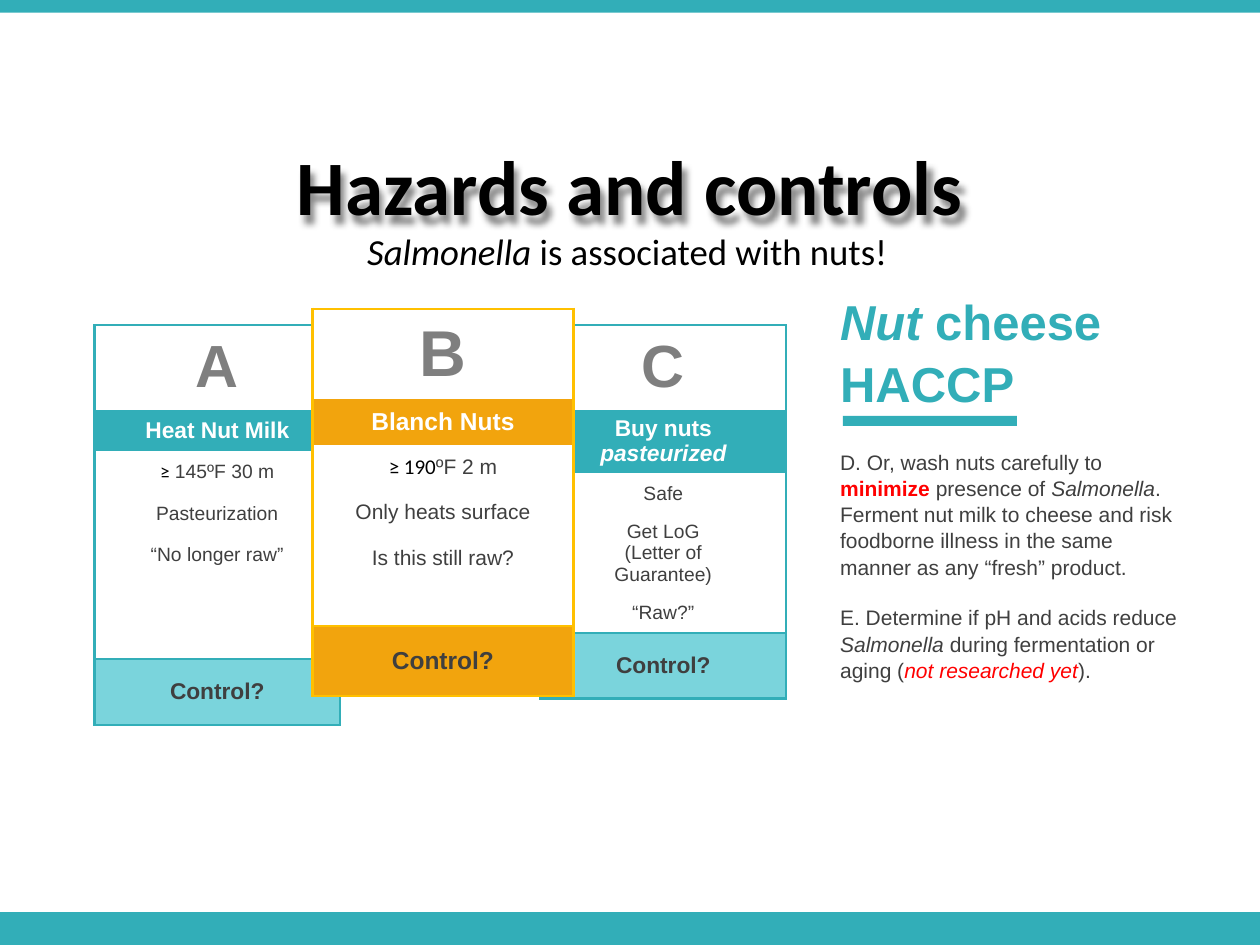
from lxml import etree
from pptx import Presentation
from pptx.dml.color import RGBColor
from pptx.enum.shapes import MSO_SHAPE
from pptx.enum.text import MSO_ANCHOR, PP_ALIGN
from pptx.oxml.ns import qn
from pptx.util import Pt

RECT = MSO_SHAPE.RECTANGLE
MIDDLE, TOP = MSO_ANCHOR.MIDDLE, MSO_ANCHOR.TOP
CENTER, LEFT = PP_ALIGN.CENTER, PP_ALIGN.LEFT

HUES = {"teal": "32AEB8", "aqua": "7AD4DC", "gold": "FFC000", "amber": "F2A40D",
        "gray": "7F7F7F", "dark": "3F3F3F", "black": "000000",
        "white": "FFFFFF", "red": "FF0000"}

# Content: a paragraph is a list of runs, (text, flags); flags: b bold, i italic,
# r red, c Calibri in black
TITLE = [[("Hazards and controls", "b")]]
SUB = [[("Salmonella", "i"), (" is associated with nuts!", "")]]
HEAD = [[("Nut", "bi"), (" cheese HACCP", "b")]]
BODY = [
    [("D. Or, wash nuts carefully to ", ""), ("minimize", "br"),
     (" presence of ", ""), ("Salmonella", "i"),
     (". Ferment nut milk to cheese and risk foodborne illness in the same "
      "manner as any “fresh” product.", "")],
    [("E. Determine if pH and acids reduce ", ""), ("Salmonella", "i"),
     (" during fermentation or aging (", ""), ("not researched yet", "ir"),
     (").", "")],
]

# Row heights: letter, name and items, control; columns: side, middle
SMALL = {"rows": (48.2, 23.8, 37.4), "cols": (15.8, 105.8), "sizes": (34, 13, 11),
         "line": "teal", "band": "teal", "foot": "aqua"}
LARGE = {"rows": (51.8, 25.9, 40.3), "cols": (17.3, 114.5), "sizes": (37, 14, 12),
         "line": "gold", "band": "amber", "foot": "amber"}

CARDS = [
    {"at": (54, 185.8), "look": SMALL, "letter": "A",
     "name": [[("Heat Nut Milk", "b")]],
     "items": [[[("≥", "c"), (" 145ºF 30 m", "")]],
               [[("Pasteurization", "")]],
               [[("“No longer raw”", "")]], [], []]},
    {"at": (308.9, 185.8), "look": SMALL, "letter": "C",
     "name": [[("Buy nuts", "b")], [("pasteurized", "bi")]],
     "items": [[[("Safe", "")]],
               [[("Get LoG", "")], [("(Letter of Guarantee)", "")]],
               [[("“Raw?”", "")]]]},
    {"at": (178.6, 176.4), "look": LARGE, "letter": "B",
     "name": [[("Blanch Nuts", "b")]],
     "items": [[[("≥ 190", "c"), ("ºF 2 m", "")]],
               [[("Only heats surface", "")]],
               [[("Is this still raw?", "")]], []]},
]


def rgb(hue):
    return RGBColor.from_string(HUES[hue])


def write(frame, paras, size, hue, face="Arial", align=LEFT):
    for n, runs in enumerate(paras):
        para = frame.paragraphs[0] if n == 0 else frame.add_paragraph()
        para.alignment = align
        for text, flags in runs:
            run = para.add_run()
            run.text = text
            font = run.font
            font.size = Pt(size)
            font.bold, font.italic = "b" in flags, "i" in flags
            font.name = "Calibri" if "c" in flags else face
            tone = "black" if "c" in flags else "red" if "r" in flags else hue
            font.color.rgb = rgb(tone)


def add_bar(x, y, wide, high):
    bar = slide.shapes.add_shape(RECT, Pt(x), Pt(y), Pt(wide), Pt(high))
    bar.shadow.inherit = False
    bar.fill.solid()
    bar.fill.fore_color.rgb = rgb("teal")
    bar.line.fill.background()


def add_text(at, paras, size, hue, face="Arial", align=LEFT, anchor=TOP, space=1.04):
    box = slide.shapes.add_textbox(*[Pt(v) for v in at])
    frame = box.text_frame
    frame.word_wrap = True
    frame.vertical_anchor = anchor
    write(frame, paras, size, hue, face, align)
    for para in frame.paragraphs:
        para.line_spacing = space
    return box


def add_edges(cell, sides, hue):
    props = cell._tc.get_or_add_tcPr()
    for side in "LRTB":
        edge = etree.SubElement(props, qn("a:ln" + side), w=str(Pt(1.5)))
        if side in sides:
            fill = etree.SubElement(edge, qn("a:solidFill"))
            etree.SubElement(fill, qn("a:srgbClr"), val=HUES[hue])
        else:
            etree.SubElement(edge, qn("a:noFill"))


def add_card(card):
    look = card["look"]
    big, mid, small = look["sizes"]
    # Each row: paragraphs, text size, text colour, fill
    rows = [([[(card["letter"], "b")]], big, "gray", "white"),
            (card["name"], mid, "white", look["band"])]
    rows += [(item, small, "dark", "white") for item in card["items"]]
    rows.append(([[("Control?", "b")]], mid, "dark", look["foot"]))
    last = len(rows) - 1

    first, step, foot = look["rows"]
    highs = [first] + [step] * (last - 1) + [foot]
    side, middle = look["cols"]
    wides = [side, middle, side]
    x, y = card["at"]
    table = slide.shapes.add_table(len(rows), 3, Pt(x), Pt(y), Pt(sum(wides)),
                                   Pt(sum(highs))).table
    table.first_row = table.horz_banding = False
    for col, wide in zip(table.columns, wides):
        col.width = Pt(wide)
    for row, high in zip(table.rows, highs):
        row.height = Pt(high)
    table.cell(last, 0).merge(table.cell(last, 2))

    for r, (paras, size, hue, fill) in enumerate(rows):
        for c in range(3):
            cell = table.cell(r, c)
            sides = "L" * (c == 0) + "R" * (c == 2)
            sides += "T" * (r == 0) + "B" * (r == last - 1)
            add_edges(cell, "LRTB" if r == last else sides, look["line"])
            cell.fill.solid()
            cell.fill.fore_color.rgb = rgb(fill)
            cell.vertical_anchor = MIDDLE
            if paras and c == (0 if r == last else 1):
                write(cell.text_frame, paras, size, hue, align=CENTER)
            else:  # keeps an empty cell from stretching its row
                end = cell.text_frame.paragraphs[0]._p.get_or_add_endParaRPr()
                end.set("sz", str(small * 100))


def add_shadow(box):
    effects = etree.SubElement(box._element.spPr, qn("a:effectLst"))
    shade = etree.SubElement(effects, qn("a:outerShdw"), blurRad=str(Pt(4)),
                             dist=str(Pt(5)), dir="3900000", algn="tl", rotWithShape="0")
    tone = etree.SubElement(shade, qn("a:srgbClr"), val=HUES["black"])
    etree.SubElement(tone, qn("a:alpha"), val="45000")


deck = Presentation()
deck.slide_width, deck.slide_height = Pt(720), Pt(540)
slide = deck.slides.add_slide(deck.slide_layouts[6])

# Bands at the foot and top
add_bar(0, 521.3, 720, 18.7)
add_bar(0, 0, 720, 7.2)

# Cards, the middle one in front
for card in CARDS:
    add_card(card)

# Right column
add_text((473, 162, 221.8, 74.9), HEAD, 28, "teal")
add_bar(481.7, 237.6, 99.4, 5.8)
notes = add_text((473, 252.7, 209.5, 138.2), BODY, 12, "dark")
notes.text_frame.paragraphs[1].space_before = Pt(14)

# Title and subtitle
title = add_text((0, 85, 720, 47.5), TITLE, 44, "black", "Calibri", CENTER, MIDDLE, 0.9)
add_shadow(title)
add_text((0, 133.9, 717, 22.3), SUB, 21, "black", "Calibri", CENTER, MIDDLE, 0.9)

deck.save("out.pptx")
